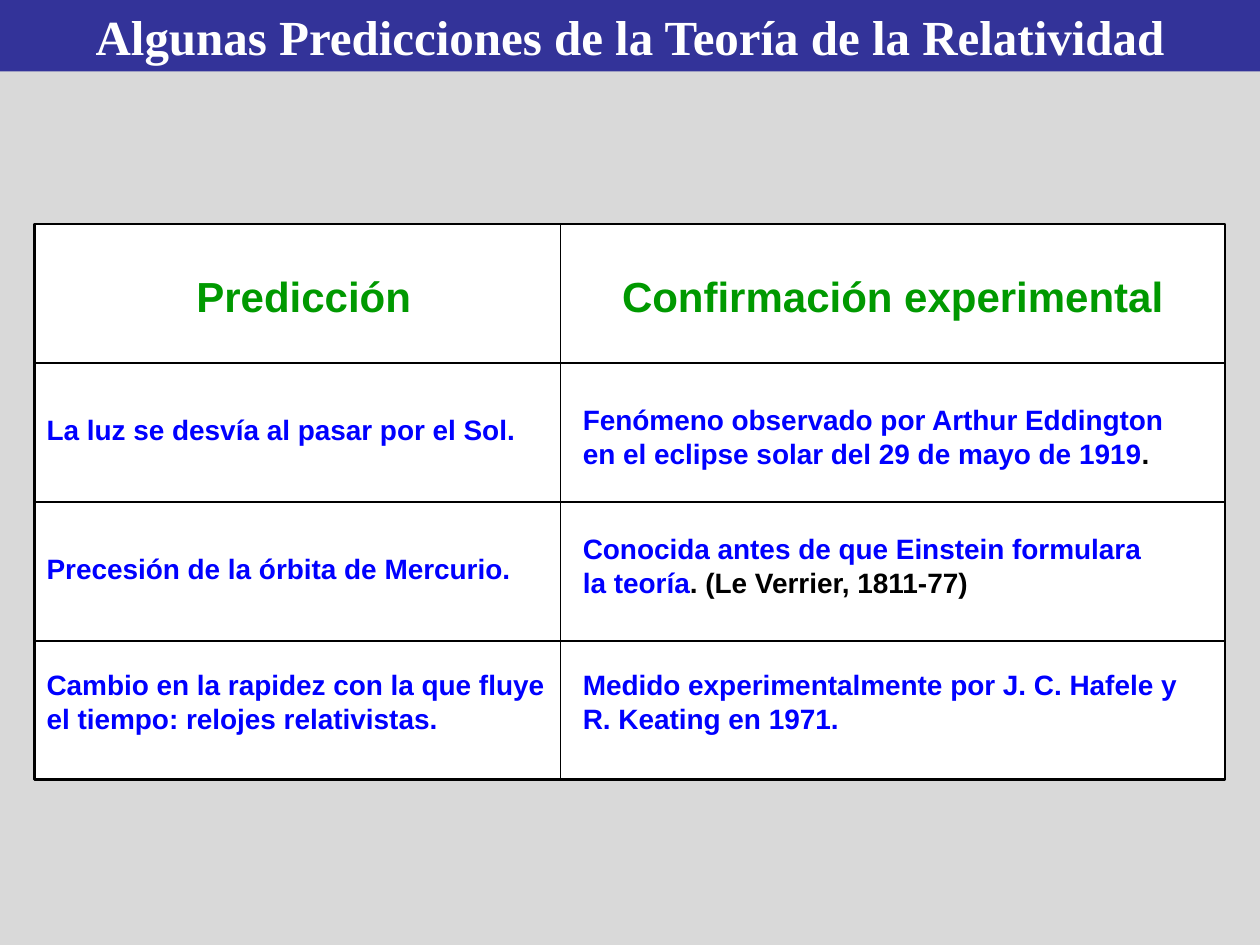
from lxml.etree import SubElement
from pptx import Presentation
from pptx.dml.color import RGBColor
from pptx.enum.shapes import MSO_CONNECTOR, MSO_SHAPE
from pptx.enum.text import MSO_ANCHOR, MSO_AUTO_SIZE, PP_ALIGN
from pptx.oxml.ns import qn
from pptx.util import Cm, Pt

BLUE, GREEN, BLACK, WHITE = "0000FF", "009900", "000000", "FFFFFF"


def rgb(value):
    return RGBColor.from_string(value)


def add_run(p, text, size=16, color=BLUE, font="Arial", bold=True):
    r = p.add_run()
    r.text = text
    r.font.size, r.font.name, r.font.bold = Pt(size), font, bold
    r.font.color.rgb = rgb(color)


class SlideBuilder:
    def __init__(self, prs, background):
        self.s = prs.slides.add_slide(prs.slide_layouts[5])
        self.s.background.fill.solid()
        self.s.background.fill.fore_color.rgb = rgb(background)

    def title(self, text, width, height, fill):
        sp = self.s.shapes.title
        sp.left, sp.top, sp.width, sp.height = 0, 0, Cm(width), Cm(height)
        sp.fill.solid()
        sp.fill.fore_color.rgb = rgb(fill)
        tf = sp.text_frame
        tf.word_wrap, tf.auto_size = True, MSO_AUTO_SIZE.NONE
        tf.vertical_anchor = MSO_ANCHOR.TOP
        p = tf.paragraphs[0]
        p.alignment = PP_ALIGN.CENTER
        add_run(p, text, size=28, color=WHITE, font="Times New Roman")

    def frame(self, x, y, w, h):
        sp = self.s.shapes.add_shape(MSO_SHAPE.RECTANGLE, Cm(x), Cm(y), Cm(w), Cm(h))
        sp.shadow.inherit = False
        sp.fill.solid()
        sp.fill.fore_color.rgb = rgb(WHITE)
        sp.line.color.rgb, sp.line.width = rgb(BLACK), Pt(1.5)
        return sp

    def rule(self, x1, y1, x2, y2):
        line = self.s.shapes.add_connector(
            MSO_CONNECTOR.STRAIGHT, Cm(x1), Cm(y1), Cm(x2), Cm(y2))
        line.line.color.rgb, line.line.width = rgb(BLACK), Pt(0.75)
        SubElement(line._element.spPr, qn("a:effectLst"))
        return line

    def text(self, x, y, w, h, paragraphs, wrap=False, **style):
        """Each paragraph is a list of (text, color) runs."""
        tf = self.s.shapes.add_textbox(Cm(x), Cm(y), Cm(w), Cm(h)).text_frame
        tf.word_wrap, tf.auto_size = wrap, MSO_AUTO_SIZE.SHAPE_TO_FIT_TEXT
        for i, runs in enumerate(paragraphs):
            p = tf.add_paragraph() if i else tf.paragraphs[0]
            for text, color in runs:
                add_run(p, text, color=color, **style)


def main():
    prs = Presentation()
    prs.slide_width, prs.slide_height = Cm(25.4), Cm(19.05)
    slide = SlideBuilder(prs, "D9D9D9")
    slide.title("Algunas Predicciones de la Teoría de la Relatividad", 25.4, 1.44, "333399")

    # Grid: one frame, a column rule and three row rules
    left, top, width, row_h, rows = 0.7, 4.52, 24, 2.8, 4
    bottom, split = top + rows * row_h, 11.3
    frame = slide.frame(left, top, width, rows * row_h)
    slide.rule(split, top, split, bottom)
    for i in range(1, rows):
        y = top + i * row_h
        line = slide.rule(left, y, left + width, y)
        if 2 * i == rows:
            line.begin_connect(frame, 1)
            line.end_connect(frame, 3)

    # Column headings
    for x, w, heading in [(3.71, 5.08, "Predicción"),
                          (12.29, 11.43, "Confirmación experimental")]:
        slide.text(x, 5.33, w, 1.27, [[(heading, GREEN)]], size=24)

    # Predictions
    x = 0.69
    for y, w, h, wrap, text in [
        (8.2, 10, 0.94, False, "La luz se desvía al pasar por el Sol."),
        (11, 9.9, 0.94, False, "Precesión de la órbita de Mercurio."),
        (13.34, 10.92, 1.62, True,
         "Cambio en la rapidez con la que fluye el tiempo: relojes relativistas."),
    ]:
        slide.text(x, y, w, h, [[(text, BLUE)]], wrap=wrap)

    # Experimental confirmations
    x, h = 11.5, 1.62
    for y, w, wrap, paragraphs in [
        (8, 12.42, False, [
            [("Fenómeno observado por Arthur Eddington", BLUE)],
            [("en el eclipse solar del 29 de mayo de 1919", BLUE), (".", BLACK)]]),
        (10.6, 11.81, False, [
            [("Conocida antes de que Einstein formulara", BLUE)],
            [("la teoría", BLUE), (". (Le Verrier, 1811-77)", BLACK)]]),
        (13.34, 13, True, [
            [("Medido experimentalmente por J. C. Hafele y R. Keating en 1971.", BLUE)]]),
    ]:
        slide.text(x, y, w, h, paragraphs, wrap=wrap)

    prs.save("out.pptx")


if __name__ == "__main__":
    main()
